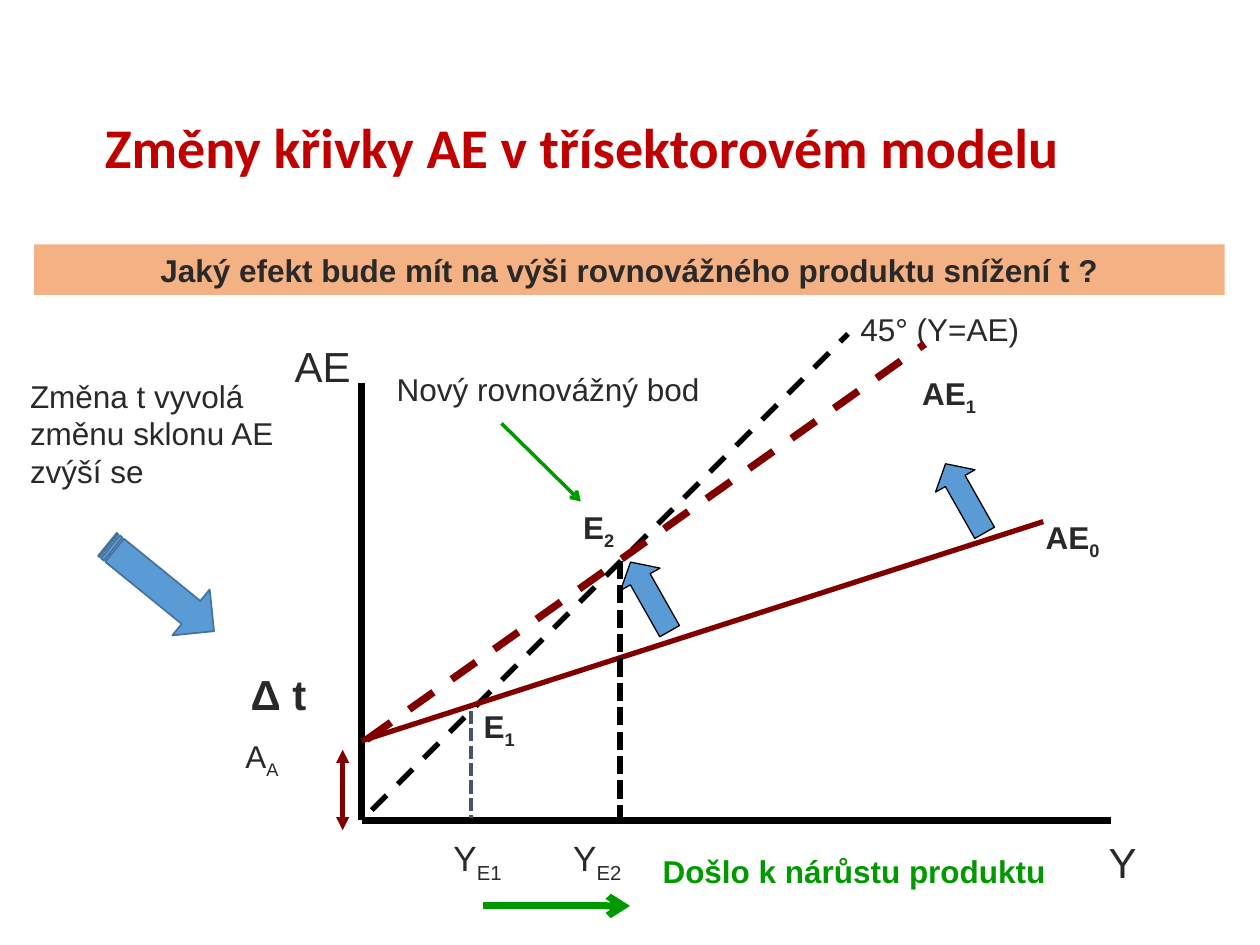
from pptx import Presentation
from pptx.dml.color import RGBColor
from pptx.enum.dml import MSO_LINE
from pptx.enum.shapes import MSO_CONNECTOR, MSO_SHAPE
from pptx.enum.text import MSO_ANCHOR, MSO_AUTO_SIZE, PP_ALIGN
from pptx.oxml.ns import qn
from pptx.util import Inches, Pt
from lxml import etree

STRAIGHT = MSO_CONNECTOR.STRAIGHT
RECTANGLE = MSO_SHAPE.RECTANGLE
UP_ARROW = MSO_SHAPE.UP_ARROW
STRIPED_ARROW = MSO_SHAPE.STRIPED_RIGHT_ARROW
DASH, DOT = MSO_LINE.DASH, MSO_LINE.SQUARE_DOT
CENTER, LEFT = PP_ALIGN.CENTER, PP_ALIGN.LEFT
MIDDLE = MSO_ANCHOR.MIDDLE
GROW = MSO_AUTO_SIZE.SHAPE_TO_FIT_TEXT
TITLE_ONLY = 5

COLUMNS, ROWS = 100, 75
WIDTH, HEIGHT = Inches(10), Inches(7.5)

BLACK, INK, MAROON, GREEN = "000000", "292929", "800000", "009900"
RED, ORANGE, BLUE, DARK_BLUE, SLATE = "C00000", "F4B183", "5B9BD5", "43739E", "44546A"


def color(hex_string):
    return RGBColor.from_string(hex_string)


def write(frame, text, size=18, font="Arial", ink=INK, bold=False, align=LEFT):
    """Fill a text frame; a line break starts a paragraph, "_" starts a subscript."""
    for index, line in enumerate(text.split("\n")):
        paragraph = frame.add_paragraph() if index else frame.paragraphs[0]
        paragraph.alignment = align
        for level, part in enumerate(line.split("_")):
            run = paragraph.add_run()
            run.text = part
            run.font.size, run.font.name, run.font.bold = Pt(size), font, bold
            run.font.color.rgb = color(ink)
            if level:
                run.font._element.set("baseline", "-25000")


class Diagram:
    """The current slide, measured on a grid of COLUMNS by ROWS."""

    def __init__(self, slide):
        self.slide = slide

    def place(self, column, row):
        return int(WIDTH * column / COLUMNS), int(HEIGHT * row / ROWS)

    def box(self, column, row, columns, rows):
        return self.place(column, row) + self.place(columns, rows)

    def title(self, text, *area):
        title = self.slide.shapes.title
        title.left, title.top, title.width, title.height = self.box(*area)
        title.text_frame.vertical_anchor = MIDDLE
        write(title.text_frame, text, size=32, font="Calibri", ink=RED, bold=True, align=CENTER)
        title.text_frame.paragraphs[0].line_spacing = 0.9

    def label(self, text, *area, **text_format):
        frame = self.slide.shapes.add_textbox(*self.box(*area)).text_frame
        frame.word_wrap = True
        frame.auto_size = GROW
        write(frame, text, **text_format)

    def shape(self, kind, *area, fill, outline=None, weight=1, turn=0):
        shape = self.slide.shapes.add_shape(kind, *self.box(*area))
        shape.shadow.inherit = False
        shape.rotation = turn
        shape.fill.solid()
        shape.fill.fore_color.rgb = color(fill)
        if outline:
            shape.line.color.rgb = color(outline)
            shape.line.width = Pt(weight)
        else:
            shape.line.fill.background()
        return shape

    def banner(self, text, *area):
        frame = self.shape(RECTANGLE, *area, fill=ORANGE).text_frame
        frame.word_wrap = True
        frame.auto_size = GROW
        write(frame, text, bold=True, align=CENTER)

    def shift_arrow(self, column, row):
        arrow = self.shape(UP_ARROW, column, row, 3.6, 6.3, fill=BLUE,
                           outline=BLACK, weight=0.75, turn=330.5)
        arrow.adjustments[0], arrow.adjustments[1] = 0.5, 0.436

    def line(self, start, end, ink, weight, dash=None, head=None, tail=None):
        line = self.slide.shapes.add_connector(STRAIGHT, *self.place(*start), *self.place(*end))
        line.line.color.rgb = color(ink)
        line.line.width = Pt(weight)
        if dash:
            line.line.dash_style = dash
        properties = line._element.spPr
        for tag, arrowhead in (("a:headEnd", head), ("a:tailEnd", tail)):
            if arrowhead:
                etree.SubElement(properties.find(qn("a:ln")), qn(tag), type=arrowhead)
        etree.SubElement(properties, qn("a:effectLst"))


def main():
    deck = Presentation()
    deck.slide_width, deck.slide_height = WIDTH, HEIGHT
    diagram = Diagram(deck.slides.add_slide(deck.slide_layouts[TITLE_ONLY]))

    diagram.title("Změny křivky AE v třísektorovém modelu", 0, 4.2, 92.4, 15.5)
    diagram.banner("Jaký efekt bude mít na výši rovnovážného produktu snížení t ?",
                   2.7, 19.4, 94.5, 4)

    # Axes
    origin = (28.7, 65.1)
    diagram.line((28.7, 30.4), origin, BLACK, 4)
    diagram.line(origin, (88.2, 65.1), BLACK, 4)
    diagram.label("AE", 22.4, 26.5, 9.4, 5, size=24)
    diagram.label("Y", 87, 65.9, 10.2, 5, size=24)

    # Expenditure curves and autonomous spending
    diagram.line((29.5, 64.3), (67.3, 26.5), BLACK, 3, dash=DASH)
    diagram.label("45° (Y=AE)", 67.3, 24.1, 15.8, 4)
    diagram.line((27.2, 59.5), (27.2, 65.9), MAROON, 2.5, head="triangle", tail="triangle")
    diagram.label("A_A", 18.5, 58, 10.6, 4)
    diagram.line((37.4, 56.4), (37.4, 64.9), SLATE, 2.5, dash=DOT)
    diagram.line((28.7, 58.8), (82.8, 41.4), MAROON, 3)
    diagram.label("AE_0", 82, 40.6, 11.3, 4, bold=True)
    diagram.line((29.1, 58.7), (73.4, 27.3), MAROON, 4.25, dash=DASH)
    diagram.label("AE_1", 72.2, 29.2, 12.2, 4, bold=True)

    # Shift of the curve
    diagram.shift_arrow(49.8, 44.2)
    diagram.shift_arrow(74.8, 36.4)
    diagram.label("Změna t vyvolá změnu sklonu AE\nzvýší se", 1.4, 29.4, 22.3, 10.1)
    diagram.shape(STRIPED_ARROW, 7.3, 44.3, 10.9, 4.7, fill=BLUE, outline=DARK_BLUE, turn=39.1)
    diagram.label("Δ t", 18.9, 52.6, 12.4, 5, size=24, bold=True)

    # Equilibrium points and their products
    diagram.line((49.2, 44.5), (49.2, 64.9), BLACK, 3.5, dash=DOT)
    diagram.label("E_1", 37.4, 55.6, 9.4, 4, bold=True)
    diagram.label("E_2", 45.3, 39.8, 9.4, 4, bold=True)
    for product, column in (("Y_E1", 35), ("Y_E2", 44.5)):
        diagram.label(product, column, 65.9, 7.1, 4.3, size=20)
    diagram.label("Nový rovnovážný bod", 30.5, 28.9, 28.9, 4)
    diagram.line((39.8, 33.6), (46.1, 39.8), GREEN, 2, tail="arrow")
    diagram.line((38.3, 71.9), (50, 71.9), GREEN, 4, tail="arrow")
    diagram.label("Došlo k nárůstu produktu", 51.6, 67.1, 32.8, 4, ink=GREEN, bold=True)

    deck.save("out.pptx")


if __name__ == "__main__":
    main()
